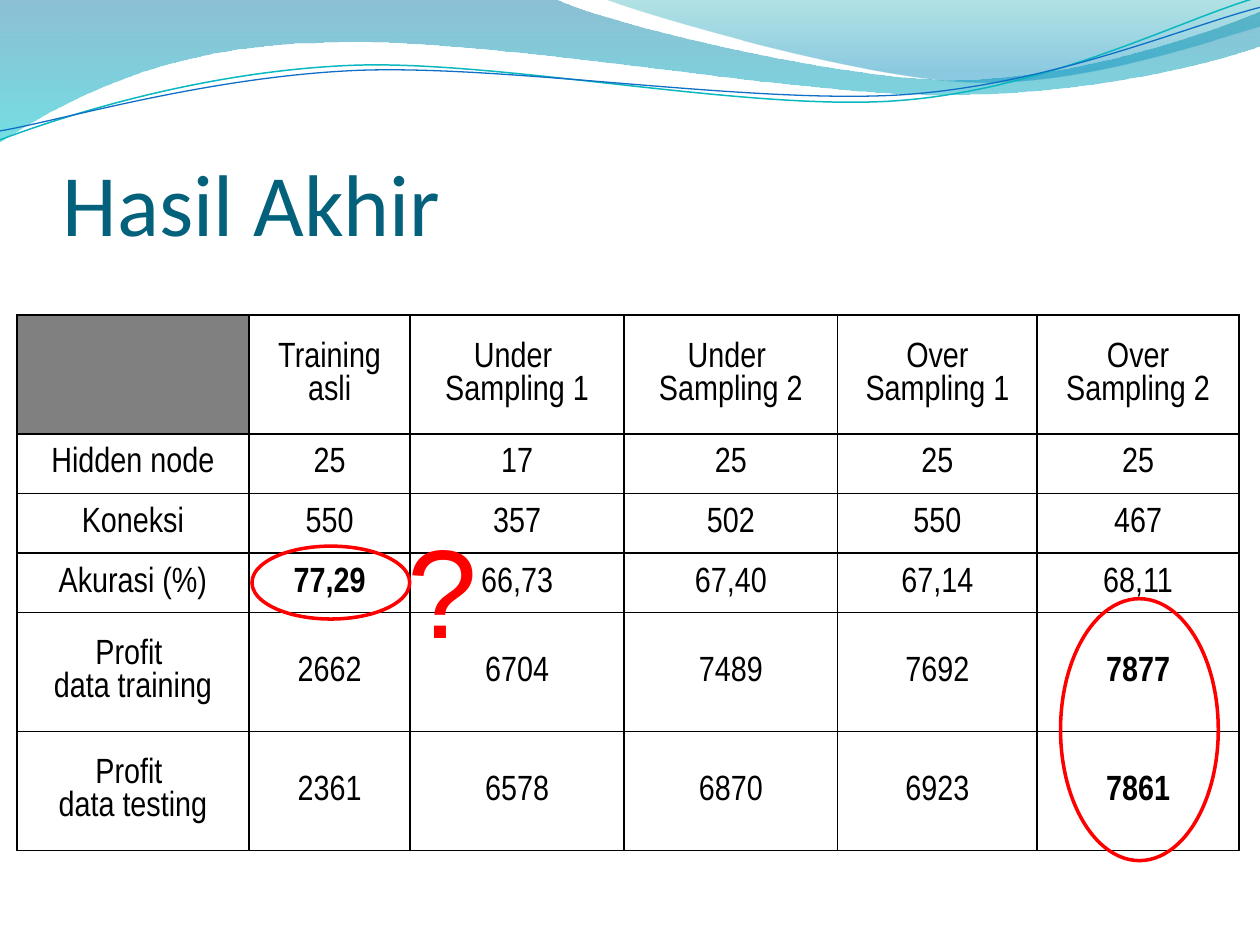
from itertools import chain

from lxml.etree import SubElement
from pptx import Presentation
from pptx.dml.color import RGBColor
from pptx.enum.shapes import MSO_SHAPE as Preset
from pptx.enum.text import MSO_ANCHOR as Anchor, MSO_AUTO_SIZE as AutoSize, PP_ALIGN as Align
from pptx.oxml.ns import qn
from pptx.util import Cm, Pt

BLACK = RGBColor(0x00, 0x00, 0x00)
WHITE = RGBColor(0xFF, 0xFF, 0xFF)
GREY = RGBColor(0x80, 0x80, 0x80)
RED = RGBColor(0xFF, 0x00, 0x00)
TITLE_BLUE = RGBColor(0x04, 0x61, 0x7B)
DEEP_BLUE = RGBColor(0x00, 0x74, 0xA1)
CYAN = RGBColor(0x00, 0xC6, 0xCF)
TEAL = RGBColor(0x00, 0xA1, 0xA9)
SKY = RGBColor(0x00, 0x8B, 0xBF)
LINE_TEAL = RGBColor(0x0A, 0xB8, 0xBF)
LINE_BLUE = RGBColor(0x0F, 0x6F, 0xC6)

LEFT_WAVE = [
    [(0, -0.03)], [(11.18, -0.03)],
    [(12.09, 0.43), (16.87, 1.6), (19.25, 1.6)],
    [(21.67, 1.6), (24.33, 0.66), (25.4, 0.23)],
    [(25.43, 0.91)],
    [(24.97, 1.12), (22.1, 1.93), (18.95, 1.91)],
    [(15.8, 1.91), (9.7, 0.71), (6.53, 0.86)],
    [(3.25, 0.89), (1.17, 2.11), (-0.03, 2.87)],
]
RIGHT_WAVE = [
    [(12.17, -0.03)],
    [(12.93, 0.28), (17.32, 1.57), (19.53, 1.65)],
    [(21.74, 1.75), (24.41, 0.81), (25.4, 0.53)],
    [(25.4, 0)],
]
TEAL_CURVE = [
    [(0, 2.82)],
    [(1.22, 2.36), (4.01, 1.45), (7.04, 1.32)],
    [(10.03, 1.19), (15.06, 2.26), (18.11, 2.03)],
    [(21.16, 1.8), (23.83, 0.38), (25.35, -0.05)],
]
BLUE_CURVE = [
    [(0, 2.64)],
    [(1.19, 2.44), (4.17, 1.55), (7.19, 1.42)],
    [(10.24, 1.3), (15.16, 2.11), (18.21, 1.91)],
    [(21.23, 1.7), (23.9, 0.53), (25.4, 0.15)],
]

COLUMNS = [4.68, 3.25, 4.31, 4.31, 4.02, 4.07]
ROWS = [2.4, 1.2, 1.2, 1.2, 2.4, 2.4]
RESULTS = [
    ["", "Training asli", "Under \nSampling 1", "Under \nSampling 2", "Over\nSampling 1", "Over\nSampling 2"],
    ["Hidden node", "25", "17", "25", "25", "25"],
    ["Koneksi", "550", "357", "502", "550", "467"],
    ["Akurasi (%)", "77,29", "66,73", "67,40", "67,14", "68,11"],
    ["Profit \ndata training", "2662", "6704", "7489", "7692", "7877"],
    ["Profit \ndata testing", "2361", "6578", "6870", "6923", "7861"],
]
BEST = {"77,29", "7877", "7861"}


def add_outline(page, left, top, segments, closed):
    """Draw straight and cubic segments, measured from left and top."""
    points = [(Cm(left + x), Cm(top + y)) for x, y in chain.from_iterable(segments)]
    builder = page.shapes.build_freeform(*points[0])
    builder.add_line_segments(points[1:], close=closed)
    shape = builder.convert_to_shape()
    shape.shadow.inherit = False
    steps = iter(list(shape._element.iter(qn("a:lnTo"))))
    for segment in segments[1:]:
        parts = [next(steps) for _ in segment]
        if len(parts) == 3:
            curve = parts[0].makeelement(qn("a:cubicBezTo"))
            parts[0].addprevious(curve)
            for part in parts:
                curve.append(part[0])
                part.getparent().remove(part)
    return shape


def add_wave(page, left, top, segments, stops):
    """Draw a filled wave with a see-through vertical gradient."""
    wave = add_outline(page, left, top, segments, True)
    wave.line.fill.background()
    wave.fill.gradient()
    wave.fill.gradient_angle = 270
    for stop, (position, color, _) in zip(wave.fill.gradient_stops, stops):
        stop.position = position
        stop.color.rgb = color
    for element, (_, _, opacity) in zip(wave._element.iter(qn("a:srgbClr")), stops):
        SubElement(element, qn("a:alpha"), val=str(opacity * 1000))


def add_banner(page, left, top):
    """Draw the waves and thin curves at the head of the page."""
    add_wave(page, left, top, LEFT_WAVE, [(0, DEEP_BLUE, 45), (1, CYAN, 55)])
    add_wave(page, left, top, RIGHT_WAVE, [(0, TEAL, 30), (0.8, SKY, 45)])
    for segments, color, width in [(TEAL_CURVE, LINE_TEAL, 0.85), (BLUE_CURVE, LINE_BLUE, 0.75)]:
        curve = add_outline(page, left, top, segments, False)
        curve.fill.background()
        curve.line.color.rgb = color
        curve.line.width = Pt(width)


def style_text(frame, name, size, color, align):
    """Give every run of a text frame one font and alignment."""
    for para in frame.paragraphs:
        para.alignment = align
        for span in para.runs:
            span.font.name = name
            span.font.size = Pt(size)
            span.font.color.rgb = color


def add_title(page, left, top, width, height):
    """Place the page title at the bottom of its box."""
    box = page.shapes.add_textbox(Cm(left), Cm(top), Cm(width), Cm(height))
    frame = box.text_frame
    frame.word_wrap = True
    frame.vertical_anchor = Anchor.BOTTOM
    frame.margin_left = frame.margin_right = frame.margin_bottom = 0
    frame.text = "Hasil Akhir"
    style_text(frame, "Calibri", 50, TITLE_BLUE, Align.JUSTIFY)


def add_borders(cell):
    """Put a thin black line on all sides of a cell."""
    props = cell._tc.get_or_add_tcPr()
    for index, side in enumerate(("a:lnL", "a:lnR", "a:lnT", "a:lnB")):
        line = props.makeelement(qn(side), {"w": str(Pt(1))})
        fill = SubElement(line, qn("a:solidFill"))
        SubElement(fill, qn("a:srgbClr"), val=str(BLACK))
        props.insert(index, line)


def fill_cell(cell, text):
    """Write and format one table cell."""
    if text:
        cell.fill.background()
    else:
        cell.fill.solid()
        cell.fill.fore_color.rgb = GREY
    cell.vertical_anchor = Anchor.MIDDLE
    cell.margin_left = cell.margin_right = Cm(0.13)
    cell.margin_top = cell.margin_bottom = 0
    cell.text_frame.text = text
    style_text(cell.text_frame, "Arial Narrow", 20, BLACK, Align.CENTER)
    for para in cell.text_frame.paragraphs:
        for span in para.runs:
            span.font.bold = text in BEST
    add_borders(cell)


def add_results(page, left, top):
    """Build the table of results."""
    frame = page.shapes.add_table(
        len(ROWS), len(COLUMNS), Cm(left), Cm(top), Cm(sum(COLUMNS)), Cm(sum(ROWS)))
    table = frame.table
    table.first_row = table.horz_banding = False
    for column, width in zip(table.columns, COLUMNS):
        column.width = Cm(width)
    for row, height, texts in zip(table.rows, ROWS, RESULTS):
        row.height = Cm(height)
        for cell, text in zip(row.cells, texts):
            fill_cell(cell, text)


def add_ring(page, left, top, width, height):
    """Circle a result in red."""
    ring = page.shapes.add_shape(Preset.OVAL, Cm(left), Cm(top), Cm(width), Cm(height))
    ring.shadow.inherit = False
    ring.fill.background()
    ring.line.color.rgb = RED
    ring.line.width = Pt(2)


def add_question(page, left, top, width, height):
    """Place the large red question mark."""
    box = page.shapes.add_textbox(Cm(left), Cm(top), Cm(width), Cm(height))
    frame = box.text_frame
    frame.word_wrap = False
    frame.auto_size = AutoSize.SHAPE_TO_FIT_TEXT
    frame.text = "?"
    style_text(frame, "Arial", 72, RED, Align.LEFT)


def main():
    """Build the page and save the deck."""
    deck = Presentation()
    deck.slide_width, deck.slide_height = Cm(25.4), Cm(19.05)
    page = deck.slides.add_slide(deck.slide_layouts[6])
    page.background.fill.solid()
    page.background.fill.fore_color.rgb = WHITE
    add_banner(page, 0, 0)
    add_results(page, 0.34, 6.35)
    add_title(page, 1.27, 1.94, 23.06, 3.18)
    add_ring(page, 21.38, 12.07, 3.18, 5.28)
    add_ring(page, 5.08, 11.01, 3.18, 1.47)
    add_question(page, 7.96, 10.21, 1.93, 3.33)
    deck.save("out.pptx")


if __name__ == "__main__":
    main()
